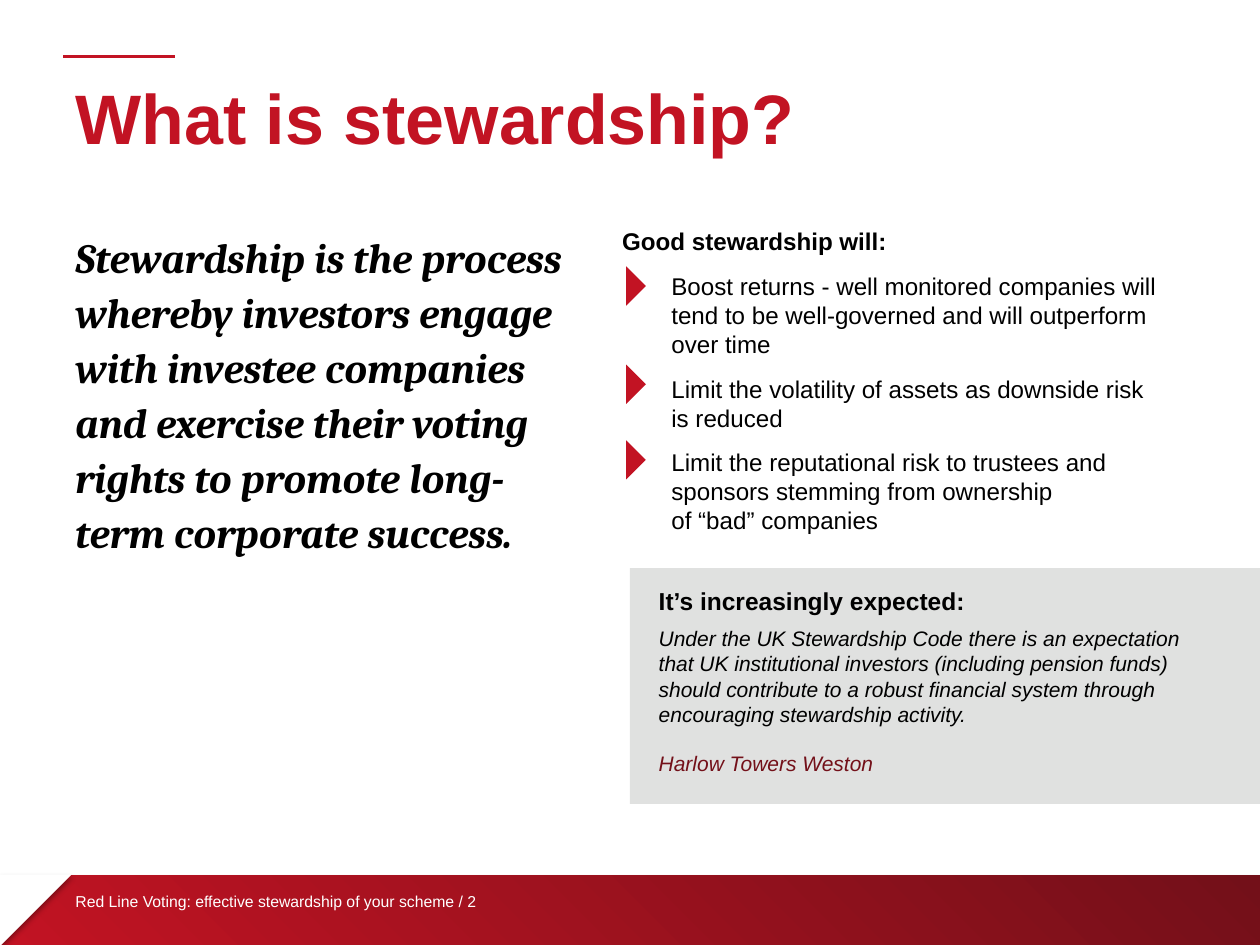
import dataclasses

import lxml.etree
import pptx
import pptx.dml.color
import pptx.enum.shapes
import pptx.enum.text
import pptx.oxml.ns
import pptx.util

Inches = pptx.util.Inches
Pt = pptx.util.Pt
RGB = pptx.dml.color.RGBColor
SHAPE = pptx.enum.shapes.MSO_SHAPE
ANCHOR = pptx.enum.text.MSO_ANCHOR
qn = pptx.oxml.ns.qn


@dataclasses.dataclass(frozen=True)
class Theme:
    red: str = "C21323"
    dark_red: str = "731019"
    grey: str = "E0E1E0"
    black: str = "000000"
    white: str = "FFFFFF"
    font: str = "Arial"
    quote_font: str = "Cambria"
    title: float = 40
    quote: float = 23.8
    body: float = 13.8
    panel_head: float = 14
    panel: float = 12
    footer: float = 9


THEME = Theme()


def add_text(tf, text, size, color=THEME.black, font=THEME.font, bold=False,
             italic=False, before=0, after=0, spacing=None, indent=None, first=False):
    p = tf.paragraphs[0] if first else tf.add_paragraph()
    p.alignment = pptx.enum.text.PP_ALIGN.LEFT
    p.space_before, p.space_after = Pt(before), Pt(after)
    if spacing:
        p.line_spacing = spacing
    if indent:
        p.level = 1
        pPr = p._p.get_or_add_pPr()
        pPr.set("marL", str(Inches(indent)))
        pPr.set("indent", "0")
    for i, line in enumerate(text.split("\n")):
        if i:
            p.add_line_break()
        r = p.add_run()
        r.text = line
        r.font.name, r.font.size = font, Pt(size)
        r.font.bold, r.font.italic = bold, italic
        r.font.color.rgb = RGB.from_string(color)
    return p


def add_box(s, x, y, w, h, anchor=ANCHOR.TOP):
    tf = s.shapes.add_textbox(Inches(x), Inches(y), Inches(w), Inches(h)).text_frame
    tf.word_wrap = True
    tf.vertical_anchor = anchor
    return tf


def add_block(s, kind, x, y, w, h, color, rotation=0):
    sp = s.shapes.add_shape(kind, Inches(x), Inches(y), Inches(w), Inches(h))
    sp.shadow.inherit = False
    sp.fill.solid()
    sp.fill.fore_color.rgb = RGB.from_string(color)
    sp.line.fill.background()
    sp.rotation = rotation
    return sp


def add_shadow(sp):
    effects = sp._element.spPr.find(qn("a:effectLst"))
    shadow = lxml.etree.SubElement(
        effects, qn("a:outerShdw"), blurRad=str(Pt(3.1)), dist=str(Pt(1.8)),
        dir="5400000", rotWithShape="0")
    color = lxml.etree.SubElement(shadow, qn("a:srgbClr"), val=THEME.black)
    lxml.etree.SubElement(color, qn("a:alpha"), val="35000")


def add_footer(s, x, y, w, h, text):
    band = add_block(s, SHAPE.RECTANGLE, x, y, w, h, THEME.red)
    band.fill.gradient()
    band.fill.gradient_angle = 45
    for stop, color in zip(band.fill.gradient_stops, (THEME.red, THEME.dark_red)):
        stop.color.rgb = RGB.from_string(color)
    corner = add_block(s, SHAPE.RIGHT_TRIANGLE, x, y - 0.01, h + 0.02, h + 0.02,
                       THEME.white, rotation=90)
    for sp in (band, corner):
        add_shadow(sp)
    tf = add_box(s, x + 0.5, y, 6.08, 0.4, ANCHOR.MIDDLE)
    add_text(tf, text, THEME.footer, THEME.white, first=True)


def add_title(s, x, y, w, h, text):
    rule = s.shapes.add_connector(pptx.enum.shapes.MSO_CONNECTOR.STRAIGHT,
                                  Inches(x), Inches(y + 0.15),
                                  Inches(x + 0.89), Inches(y + 0.15))
    rule.line.color.rgb = RGB.from_string(THEME.red)
    rule.line.width = Pt(2)
    lxml.etree.SubElement(rule._element.spPr, qn("a:effectLst"))
    title = s.shapes.title
    title.left, title.top = Inches(x), Inches(y)
    title.width, title.height = Inches(w), Inches(h)
    title.text_frame.vertical_anchor = ANCHOR.MIDDLE
    add_text(title.text_frame, text, THEME.title, THEME.red, bold=True, first=True)


def add_quote(s, x, y, w, h, text):
    tf = add_box(s, x, y, w, h)
    add_text(tf, text, THEME.quote, font=THEME.quote_font, bold=True, italic=True,
             spacing=1.1, first=True)


def add_benefits(s, x, y, w, h, heading, items):
    tf = add_box(s, x, y, w, h)
    add_text(tf, heading, THEME.body, bold=True, first=True)
    for offset, item in items:
        add_text(tf, item, THEME.body, before=9, indent=0.39)
        add_block(s, SHAPE.RIGHT_TRIANGLE, x + 0.02, y + offset, 0.22, 0.22,
                  THEME.red, rotation=225)


def add_panel(s, x, y, w, h, heading, text, source):
    add_block(s, SHAPE.RECTANGLE, x, y, w, h, THEME.grey)
    tf = add_box(s, x + 0.13, y + 0.09, w - 0.63, h)
    add_text(tf, heading, THEME.panel_head, bold=True, after=6, first=True)
    add_text(tf, text, THEME.panel, italic=True)
    add_text(tf, source, THEME.panel, THEME.dark_red, italic=True, before=14)


def main():
    prs = pptx.Presentation()
    prs.slide_width, prs.slide_height = Inches(10), Inches(7.5)
    s = prs.slides.add_slide(prs.slide_layouts[5])
    add_footer(s, 0, 6.95, 10, 0.55,
               "Red Line Voting: effective stewardship of your scheme / 2")
    add_title(s, 0.5, 0.3, 9, 1.25, "What is stewardship?")
    add_quote(s, 0.5, 1.75, 4.17, 4.95,
              "Stewardship is the process whereby investors engage with investee "
              "companies and exercise their voting rights to promote long-term "
              "corporate success.")
    add_benefits(s, 4.84, 1.75, 4.66, 2.54, "Good stewardship will:", [
        (0.41, "Boost returns - well monitored companies will tend to be "
               "well-governed and will outperform over time"),
        (1.19, "Limit the volatility of assets as downside risk \nis reduced"),
        (1.79, "Limit the reputational risk to trustees and sponsors stemming "
               "from ownership \nof “bad” companies"),
    ])
    add_panel(s, 5, 4.51, 5, 1.87, "It’s increasingly expected:",
              "Under the UK Stewardship Code there is an expectation that UK "
              "institutional investors (including pension funds) should contribute "
              "to a robust financial system through encouraging stewardship activity.",
              "Harlow Towers Weston")
    prs.save("out.pptx")


if __name__ == "__main__":
    main()
